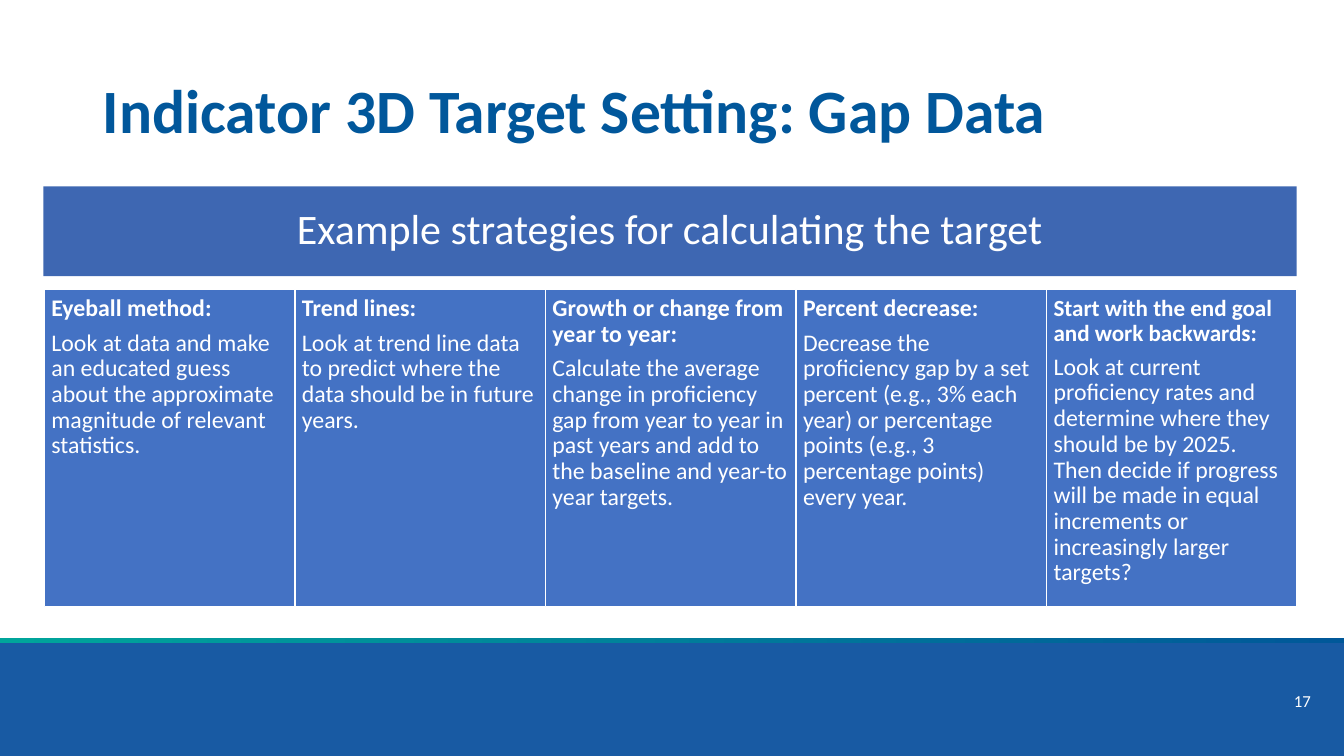
from pptx import Presentation
from pptx.dml.color import RGBColor
from pptx.enum.shapes import MSO_SHAPE as SHAPE
from pptx.enum.text import MSO_ANCHOR as ANCHOR, PP_ALIGN as ALIGN
from pptx.util import Inches, Pt

FONT = "Calibri"
WHITE = "FFFFFF"
BLUE = "4472C4"

# Heading, heading size, description
STRATEGIES = [
    ("Eyeball method:", 17,
     "Look at data and make an educated guess about the approximate "
     "magnitude of relevant statistics."),
    ("Trend lines:", 17,
     "Look at trend line data to predict where the data should be in "
     "future years."),
    ("Growth or change from year to year:", 17,
     "Calculate the average change in proficiency gap from year to year in "
     "past years and add to the baseline and year-to year targets."),
    ("Percent decrease:", 17,
     "Decrease the proficiency gap by a set percent (e.g., 3% each year) or "
     "percentage points (e.g., 3 percentage points) every year."),
    ("Start with the end goal and work backwards:", 16.5,
     "Look at current proficiency rates and determine where they should be "
     "by 2025. Then decide if progress will be made in equal increments or "
     "increasingly larger targets?"),
]


def rgb(color):
    return RGBColor.from_string(color)


def set_text(sp, paragraphs, anchor=ANCHOR.MIDDLE, inset=None, **para_format):
    """Fill a shape with (text, size, bold, colour) paragraphs."""
    tf = sp.text_frame
    tf.word_wrap = True
    tf.vertical_anchor = anchor
    if inset is not None:
        for side in ("left", "top", "right", "bottom"):
            setattr(tf, f"margin_{side}", Inches(inset))
    for i, (text, size, bold, color) in enumerate(paragraphs):
        p = tf.add_paragraph() if i else tf.paragraphs[0]
        for name, value in para_format.items():
            setattr(p, name, value)
        r = p.add_run()
        r.text = text
        for name, value in {"name": FONT, "size": Pt(size), "bold": bold}.items():
            setattr(r.font, name, value)
        r.font.color.rgb = rgb(color)


def add_box(s, box, fill=None, line=None):
    sp = s.shapes.add_shape(SHAPE.RECTANGLE, *map(Inches, box))
    sp.shadow.inherit = False
    if fill:
        sp.fill.solid()
        sp.fill.fore_color.rgb = rgb(fill)
    if line:
        sp.line.color.rgb = rgb(line)
        sp.line.width = Pt(1)
    else:
        sp.line.fill.background()
    return sp


def add_gradient_strip(s, box, colors):
    sp = add_box(s, box)
    sp.fill.gradient()
    sp.fill.gradient_angle = 180
    for stop, color in zip(sp.fill.gradient_stops, colors):
        stop.color.rgb = rgb(color)


def add_label(s, box, text, size, bold, color, **para_format):
    sp = s.shapes.add_textbox(*map(Inches, box))
    set_text(sp, [(text, size, bold, color)], **para_format)


def add_strategies(s, left, top, width, height):
    for i, (heading, size, description) in enumerate(STRATEGIES):
        sp = add_box(s, (left + i * width, top, width, height), BLUE, WHITE)
        set_text(sp, [(heading, size, True, WHITE), (description, 17, False, WHITE)],
                 ANCHOR.TOP, 0.07, alignment=ALIGN.LEFT, line_spacing=0.9,
                 space_after=Pt(6))


def main():
    prs = Presentation()
    prs.slide_width, prs.slide_height = Inches(13.33), Inches(7.5)
    s = prs.slides.add_slide(prs.slide_layouts[6])

    # Footer
    add_gradient_strip(s, (0, 6.33, 13.33, 0.05), ("005899", "00A59B"))
    add_box(s, (0, 6.38, 13.33, 1.17), "185AA3")

    # Title and slide number
    add_label(s, (0.92, 0.4, 11.5, 1.45), "Indicator 3D Target Setting: Gap Data",
              44, True, "01579B", line_spacing=0.9)
    add_label(s, (12.63, 6.67, 0.47, 0.56), "17", 12, False, WHITE,
              alignment=ALIGN.RIGHT)

    # Banner
    banner = add_box(s, (0.43, 1.85, 12.43, 0.89), "3E67B2")
    set_text(banner, [("Example strategies for calculating the target", 30, False, WHITE)],
             inset=0.12, alignment=ALIGN.CENTER, line_spacing=0.9)

    # Strategy columns
    add_strategies(s, 0.44, 2.87, 2.485, 3.15)

    prs.save("out.pptx")


if __name__ == "__main__":
    main()
